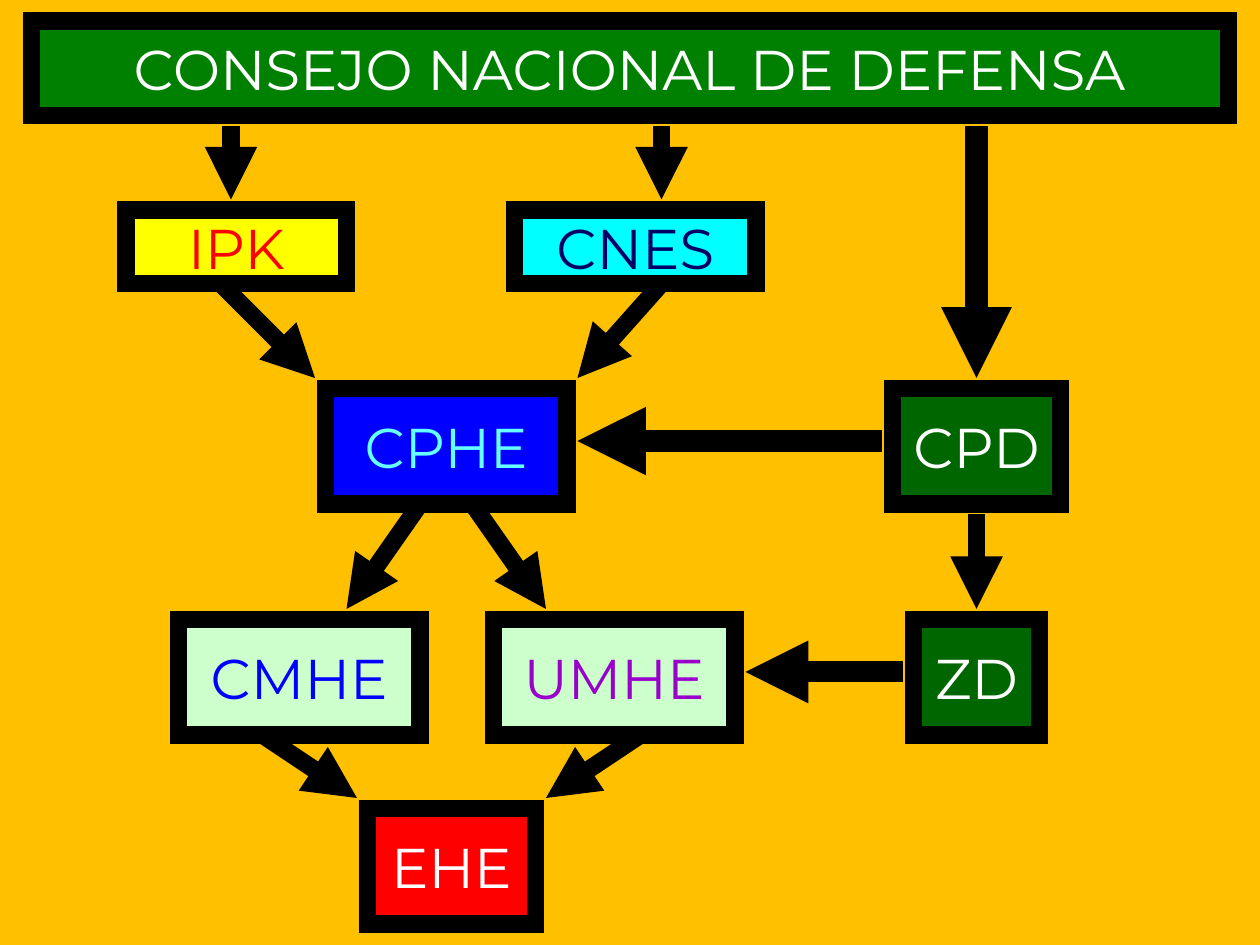
from lxml import etree
from pptx import Presentation
from pptx.dml.color import RGBColor
from pptx.enum.shapes import MSO_CONNECTOR, MSO_SHAPE
from pptx.enum.text import MSO_ANCHOR, MSO_AUTO_SIZE, PP_ALIGN
from pptx.oxml.ns import qn
from pptx.util import Inches, Pt

RECT = MSO_SHAPE.RECTANGLE
LINE = MSO_CONNECTOR.STRAIGHT
MID = MSO_ANCHOR.MIDDLE
CENTER = PP_ALIGN.CENTER
NO_FIT = MSO_AUTO_SIZE.NONE

FONT = "Montserrat"
COLORS = {
    "amber": "FFC000", "black": "000000", "white": "FFFFFF",
    "green": "008000", "forest": "006600", "mint": "CCFFCC",
    "yellow": "FFFF00", "red": "FF0000", "aqua": "00FFFF",
    "sky": "66FFFF", "navy": "000066", "blue": "0000FF",
    "purple": "9900CC",
}

# Grid of 120 columns by 90 rows, twelve to the inch
COLS, ROWS = 120, 90

# Text, column, row, columns wide, rows high, fill, ink
TITLE = ("CONSEJO NACIONAL DE DEFENSA", 3, 2, 114, 9, "green", "white")
BOXES = [
    ("IPK", 12, 20, 21, 7, "yellow", "red"),
    ("CNES", 49, 20, 23, 7, "aqua", "navy"),
    ("CPHE", 31, 37, 23, 11, "blue", "sky"),
    ("CPD", 85, 37, 16, 11, "forest", "white"),
    ("CMHE", 17, 59, 23, 11, "mint", "blue"),
    ("UMHE", 47, 59, 23, 11, "mint", "purple"),
    ("ZD", 87, 59, 12, 11, "forest", "white"),
    ("EHE", 35, 77, 16, 11, "red", "white"),
]

# Start column and row, end column and row, line width
ARROWS = [
    (22, 12, 22, 19, 10),    # council to IPK
    (63, 12, 63, 19, 10),    # council to CNES
    (93, 12, 93, 36, 13.5),  # council to CPD
    (21, 27, 30, 36, 10),    # IPK to CPHE
    (63, 27, 55, 36, 10),    # CNES to CPHE
    (84, 42, 55, 42, 13),    # CPD to CPHE
    (93, 49, 93, 58, 10),    # CPD to ZD
    (40, 48, 33, 58, 10),    # CPHE to CMHE
    (45, 48, 52, 58, 10),    # CPHE to UMHE
    (86, 64, 71, 64, 12),    # ZD to UMHE
    (25, 70, 34, 76, 10),    # CMHE to EHE
    (61, 70, 52, 76, 10),    # UMHE to EHE
]


def unit(*cells):
    return [Inches(cell / 12) for cell in cells]


def color(name):
    return RGBColor.from_string(COLORS[name])


def stroke(shape, width):
    shape.line.color.rgb = color("black")
    shape.line.width = Pt(width)
    ln = shape.line._get_or_add_ln()
    etree.SubElement(ln, qn("a:miter"), lim="800000")
    return ln


def write(shape, text, size=32, ink="white"):
    frame = shape.text_frame
    frame.auto_size = NO_FIT
    frame.word_wrap = False
    frame.vertical_anchor = MID
    para = frame.paragraphs[0]
    para.alignment = CENTER
    run = para.add_run()
    run.text = text
    run.font.name = FONT
    run.font.size = Pt(size)
    run.font.color.rgb = color(ink)


def style(shape, text, fill, ink):
    shape.shadow.inherit = False
    shape.fill.solid()
    shape.fill.fore_color.rgb = color(fill)
    stroke(shape, 10)
    write(shape, text, ink=ink)


def add_title(slide, text, col, row, wide, high, fill, ink):
    title = slide.shapes.title
    title.left, title.top, title.width, title.height = unit(col, row, wide, high)
    style(title, text, fill, ink)


def add_box(slide, text, col, row, wide, high, fill, ink):
    box = slide.shapes.add_shape(RECT, *unit(col, row, wide, high))
    style(box, text, fill, ink)


def add_arrow(slide, *ends, width):
    arrow = slide.shapes.add_connector(LINE, *unit(*ends))
    ln = stroke(arrow, width)
    etree.SubElement(ln, qn("a:tailEnd"), type="triangle")
    etree.SubElement(arrow._element.spPr, qn("a:effectLst"))


def main():
    deck = Presentation()
    deck.slide_width, deck.slide_height = unit(COLS, ROWS)
    slide = deck.slides.add_slide(deck.slide_layouts[5])

    # Background
    back = slide.background.fill
    back.solid()
    back.fore_color.rgb = color("amber")

    # Bodies of the structure
    add_title(slide, *TITLE)
    for box in BOXES:
        add_box(slide, *box)

    # Lines of command
    for *ends, width in ARROWS:
        add_arrow(slide, *ends, width=width)

    deck.save("out.pptx")


if __name__ == "__main__":
    main()
